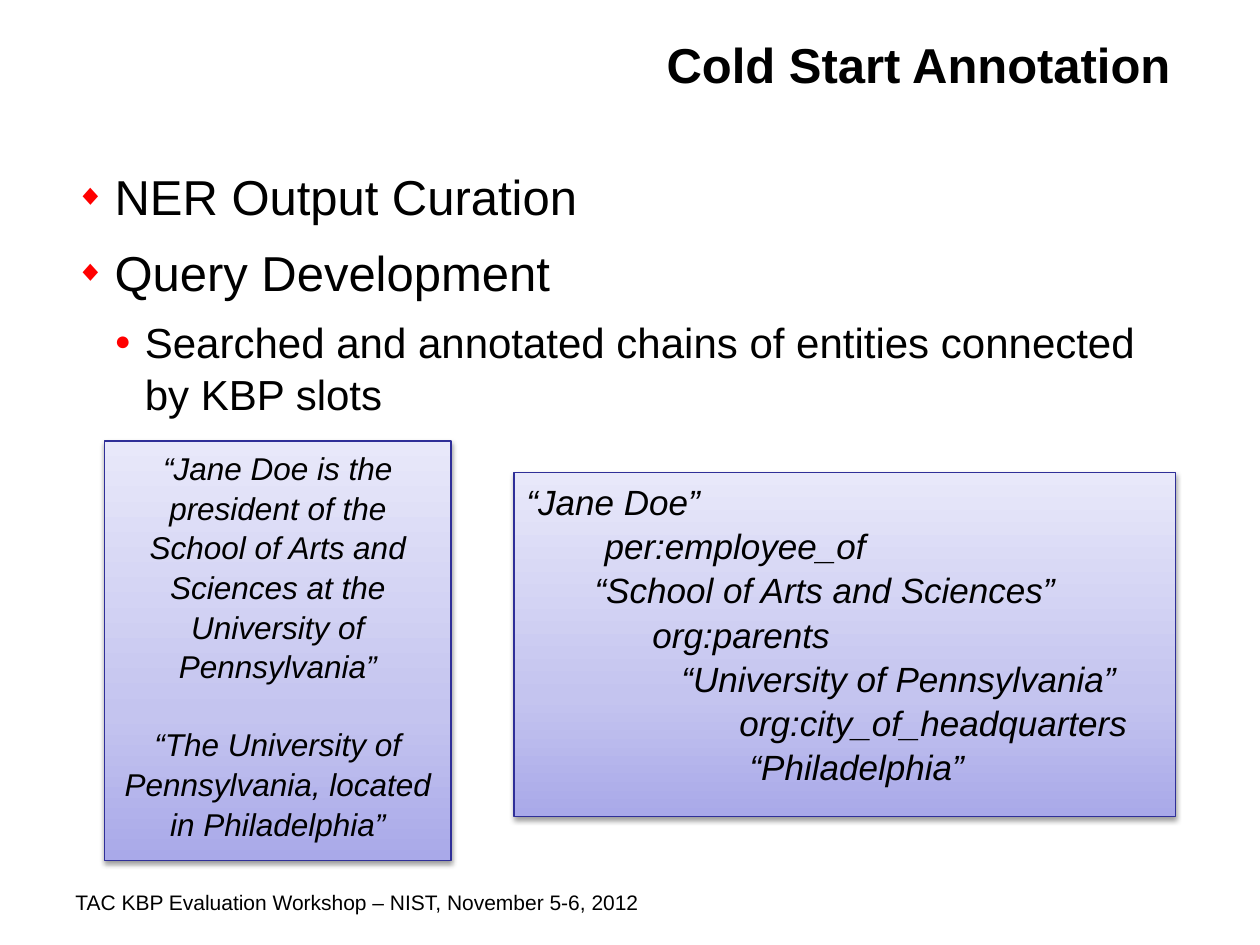
from copy import deepcopy
from dataclasses import dataclass

from lxml import etree
from pptx import Presentation
from pptx.dml.color import RGBColor
from pptx.enum import shapes, text
from pptx.oxml import ns
from pptx.util import Emu, Inches, Pt

FONT = "Arial"
BLACK, RED, BORDER = "000000", "FF0000", "2F2F98"
GRADIENT = [(0, "A9A9E9"), (0.35, "C4C4EF"), (1, "E8E8FA")]
LINE_SPACING = 1.05


@dataclass
class Line:
    content: str
    indent: float = 0
    space_before: float = 0


@dataclass
class Bullet:
    content: str
    level: int
    size: float
    space_before: float
    margin: float
    hanging: float
    symbol: str
    percent: int


@dataclass
class Panel:
    box: tuple
    size: float
    alignment: text.PP_ALIGN
    lines: list


BULLETS = [
    Bullet("NER Output Curation", 0, 28, 0, 0.31, 0.31, "◆", 60),
    Bullet("Query Development", 0, 28, 8, 0.31, 0.31, "◆", 60),
    Bullet("Searched and annotated chains of entities connected by KBP slots",
           1, 24, 7, 0.55, 0.24, "●", 65),
]
PANELS = [
    Panel((0.83, 3.5, 2.75, 3.33), 18, text.PP_ALIGN.CENTER, [
        Line("“Jane Doe is the president of the School of Arts and Sciences "
             "at the University of Pennsylvania”"),
        Line("“The University of Pennsylvania, located in Philadelphia”",
             space_before=21.7),
    ]),
    Panel((4.08, 3.75, 5.25, 2.73), 20, text.PP_ALIGN.LEFT, [
        Line("“Jane Doe”"),
        Line("per:employee_of", 0.62),
        Line("“School of Arts and Sciences”", 0.54),
        Line("org:parents", 1),
        Line("“University of Pennsylvania”", 1.23),
        Line("org:city_of_headquarters", 1.69),
        Line("“Philadelphia”", 1.77),
    ]),
]


def color(value: str) -> RGBColor:
    return RGBColor.from_string(value)


def add_xml(parent, tag: str, **attributes):
    return etree.SubElement(parent, ns.qn(tag), attributes)


def place(shape, box: tuple) -> None:
    shape.left, shape.top, shape.width, shape.height = map(Inches, box)


def prepare_frame(shape):
    frame = shape.text_frame
    frame.word_wrap = True
    frame.auto_size = text.MSO_AUTO_SIZE.NONE
    frame.vertical_anchor = text.MSO_ANCHOR.TOP
    return frame


def format_paragraph(paragraph, size: float, alignment=text.PP_ALIGN.LEFT,
                     space_before: float = 0, bold=False, italic=False) -> None:
    paragraph.alignment = alignment
    paragraph.line_spacing = LINE_SPACING
    paragraph.space_before = Pt(space_before)
    for run in paragraph.runs:
        run.font.name = FONT
        run.font.size = Pt(size)
        run.font.bold = bold
        run.font.italic = italic
        run.font.color.rgb = color(BLACK)


def fill_paragraphs(frame, items: list):
    """Write one paragraph per item and yield the pairs for formatting."""
    frame.text = "\n".join(item.content for item in items)
    return zip(frame.paragraphs, items)


def add_bullet(paragraph, bullet: Bullet) -> None:
    properties = paragraph._p.get_or_add_pPr()
    properties.set("marL", str(Inches(bullet.margin)))
    properties.set("indent", str(-Inches(bullet.hanging)))
    add_xml(add_xml(properties, "a:buClr"), "a:srgbClr", val=RED)
    add_xml(properties, "a:buSzPct", val=str(bullet.percent * 1000))
    add_xml(properties, "a:buFont", typeface=FONT)
    add_xml(properties, "a:buChar", char=bullet.symbol)


def add_gradient(shape) -> None:
    shape.fill.gradient()
    shape.fill.gradient_angle = 90
    stop_list = shape._element.spPr.find(".//" + ns.qn("a:gsLst"))
    stop_list.append(deepcopy(stop_list[0]))
    for stop, (position, value) in zip(shape.fill.gradient_stops, GRADIENT):
        stop.position = position
        stop.color.rgb = color(value)


def add_shadow(shape) -> None:
    shape.shadow.inherit = False
    effects = shape._element.spPr.find(ns.qn("a:effectLst"))
    outer = add_xml(effects, "a:outerShdw", blurRad=str(Pt(3.1)),
                    dist=str(Pt(1.6)), dir="5400000", rotWithShape="0")
    tint = add_xml(outer, "a:srgbClr", val=BLACK)
    add_xml(tint, "a:alpha", val="38000")


def add_panel(slide, panel: Panel) -> None:
    shape = slide.shapes.add_shape(
        shapes.MSO_SHAPE.RECTANGLE, *map(Inches, panel.box))
    add_gradient(shape)
    shape.line.color.rgb = color(BORDER)
    shape.line.width = Pt(0.75)
    add_shadow(shape)
    for paragraph, line in fill_paragraphs(prepare_frame(shape), panel.lines):
        paragraph._p.get_or_add_pPr().set("marL", str(Inches(line.indent)))
        format_paragraph(paragraph, panel.size, panel.alignment,
                         line.space_before, italic=True)


def main() -> None:
    presentation = Presentation()
    presentation.slide_width, presentation.slide_height = Inches(10), Inches(7.5)
    slide = presentation.slides.add_slide(presentation.slide_layouts[1])

    # Title
    title = slide.shapes.title
    place(title, (5.08, 0.22, 4.42, 0.87))
    frame = prepare_frame(title)
    frame.margin_left = frame.margin_right = frame.margin_bottom = Emu(0)
    frame.margin_top = Inches(0.03)
    frame.text = "Cold Start Annotation"
    format_paragraph(frame.paragraphs[0], 28, text.PP_ALIGN.CENTER, bold=True)

    # Bullet list
    body = slide.placeholders[1]
    place(body, (0.5, 1.25, 9, 5.42))
    for paragraph, bullet in fill_paragraphs(prepare_frame(body), BULLETS):
        paragraph.level = bullet.level
        add_bullet(paragraph, bullet)
        format_paragraph(paragraph, bullet.size,
                         space_before=bullet.space_before)

    # Footer
    footer = slide.shapes.add_textbox(*map(Inches, (0.5, 7, 6.67, 0.35)))
    frame = prepare_frame(footer)
    frame.text = "TAC KBP Evaluation Workshop – NIST, November 5-6, 2012"
    format_paragraph(frame.paragraphs[0], 12)

    # Example panels
    for panel in PANELS:
        add_panel(slide, panel)

    presentation.save("out.pptx")


if __name__ == "__main__":
    main()
